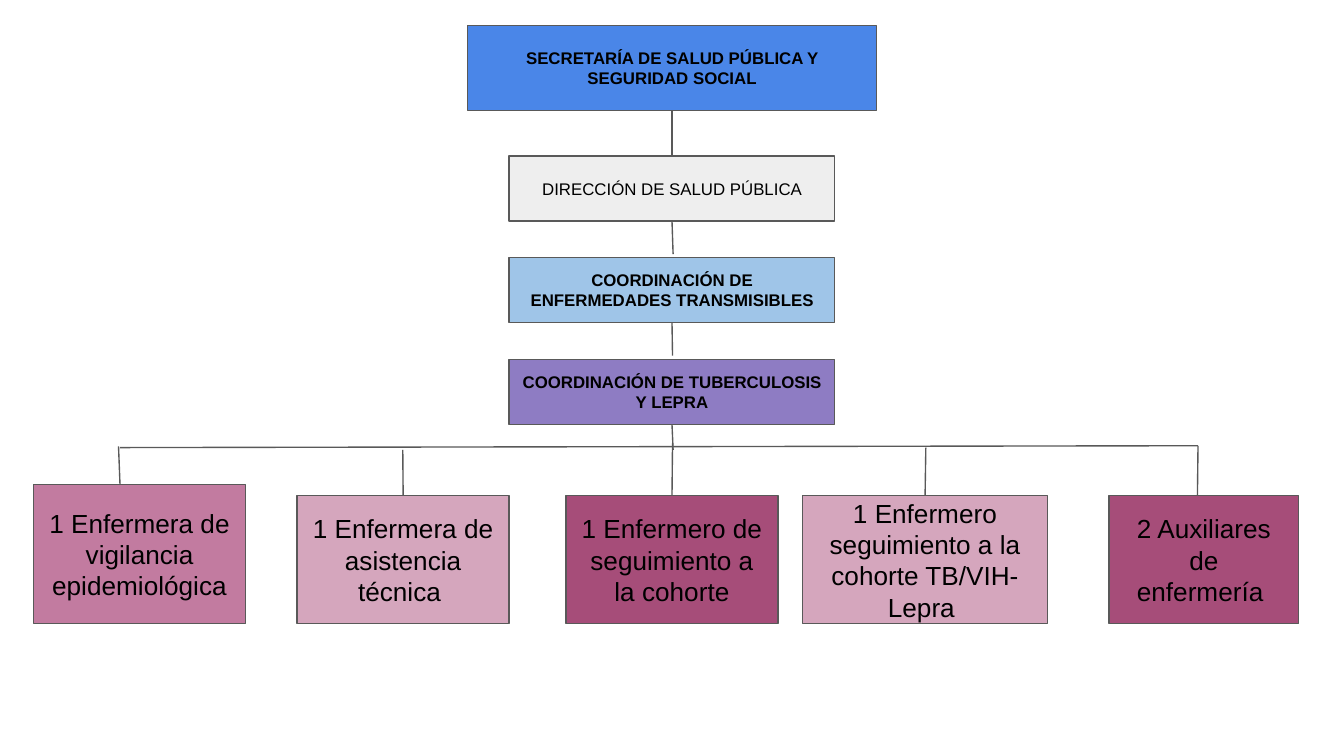
from dataclasses import dataclass
from typing import NamedTuple, Optional

from lxml.etree import SubElement
from pptx import Presentation
from pptx.dml.color import RGBColor as Rgb
from pptx.enum.shapes import MSO_CONNECTOR as Link, MSO_SHAPE as Shape
from pptx.enum.text import MSO_ANCHOR as Anchor, PP_ALIGN as Align
from pptx.oxml.ns import qn
from pptx.util import Pt


@dataclass(frozen=True)
class Theme:
    font: str = "Arial"
    ink: str = "000000"
    line: str = "595959"
    line_width: float = 0.75
    office_size: int = 9
    staff_size: int = 14
    inset: float = 7.2
    blue: str = "4A86E8"
    grey: str = "EEEEEE"
    sky: str = "9FC5E8"
    violet: str = "8E7CC3"
    mauve: str = "C27BA0"
    pink: str = "D5A6BD"
    plum: str = "A64D79"


class Unit(NamedTuple):
    text: str
    left: float
    top: float
    width: float
    height: float
    fill: str
    size: int
    bold: bool = False


class Point(NamedTuple):
    x: float
    y: float


THEME = Theme()
CENTRE = 360
BOTTOM = 334.2
TOP_SIDE, BOTTOM_SIDE = 0, 2


def office(text: str, top: float, fill: str, bold: bool = True,
           width: float = 174.4, height: float = 34.8) -> Unit:
    """A unit of the central chain, centred on the slide."""
    return Unit(text, CENTRE - width / 2, top, width, height, fill,
                THEME.office_size, bold)


def staff(text: str, left: float, width: float, fill: str,
          top: float = 265.6) -> Unit:
    """A unit of the bottom row, standing on the common base line."""
    return Unit(text, left, top, width, BOTTOM - top, fill, THEME.staff_size)


def draw_unit(slide, unit: Unit):
    box = slide.shapes.add_shape(Shape.RECTANGLE, Pt(unit.left), Pt(unit.top),
                                 Pt(unit.width), Pt(unit.height))
    box.shadow.inherit = False
    box.fill.solid()
    box.fill.fore_color.rgb = Rgb.from_string(unit.fill)
    box.line.color.rgb = Rgb.from_string(THEME.line)
    box.line.width = Pt(THEME.line_width)

    frame = box.text_frame
    inset = Pt(THEME.inset)
    frame_format = {"word_wrap": True, "vertical_anchor": Anchor.MIDDLE,
                    "margin_left": inset, "margin_right": inset,
                    "margin_top": inset, "margin_bottom": inset}
    for name, value in frame_format.items():
        setattr(frame, name, value)

    para = frame.paragraphs[0]
    para.alignment = Align.CENTER
    span = para.add_run()
    span.text = unit.text
    font_format = {"name": THEME.font, "size": Pt(unit.size), "bold": unit.bold}
    for name, value in font_format.items():
        setattr(span.font, name, value)
    span.font.color.rgb = Rgb.from_string(THEME.ink)
    return box


def draw_line(slide, start: Point, end: Point,
              upper: Optional[object] = None, lower: Optional[object] = None) -> None:
    """Draw a line, joined to the boxes above and below where given."""
    line = slide.shapes.add_connector(Link.STRAIGHT, Pt(start.x), Pt(start.y),
                                      Pt(end.x), Pt(end.y))
    line.line.color.rgb = Rgb.from_string(THEME.line)
    line.line.width = Pt(THEME.line_width)
    SubElement(line._element.spPr, qn("a:effectLst"))
    if upper is not None:
        line.begin_connect(upper, BOTTOM_SIDE)
    if lower is not None:
        line.end_connect(lower, TOP_SIDE)


OFFICES = [
    office("SECRETARÍA DE SALUD PÚBLICA Y SEGURIDAD SOCIAL", 13.7, THEME.blue,
           width=219, height=45.4),
    office("DIRECCIÓN DE SALUD PÚBLICA", 83.6, THEME.grey, bold=False),
    office("COORDINACIÓN DE ENFERMEDADES TRANSMISIBLES", 138, THEME.sky),
    office("COORDINACIÓN DE TUBERCULOSIS Y LEPRA", 192.6, THEME.violet),
]
STAFF = [
    staff("1 Enfermera de vigilancia epidemiológica", 18, 113.6, THEME.mauve, top=259.6),
    staff("1 Enfermera de asistencia técnica ", 159.2, 113.6, THEME.pink),
    staff("1 Enfermero de seguimiento a la cohorte", 303.2, 113.6, THEME.plum),
    staff("1 Enfermero seguimiento a la cohorte TB/VIH- Lepra ", 430, 131.2, THEME.pink),
    staff("2 Auxiliares de enfermería ", 594.2, 101.5, THEME.plum),
]
# Lower ends of the lines that leave each office
OFFICE_ENDS = [Point(CENTRE, 83.6), Point(360.6, 136.2),
               Point(360.3, 190.6), Point(360.6, 241)]
# Upper ends of the branches, and where the outer two meet their boxes
BRANCH_STARTS = [Point(63.5, 239.2), Point(215.8, 241), Point(360.3, 237.6),
                 Point(496, 239.8), Point(641.8, 239)]
OFF_CENTRE = {0: 64.3, 4: 641.5}


def main() -> None:
    deck = Presentation()
    deck.slide_width, deck.slide_height = Pt(720), Pt(405)
    slide = deck.slides.add_slide(deck.slide_layouts[6])

    # Boxes
    office_boxes = [draw_unit(slide, unit) for unit in OFFICES]
    staff_boxes = [draw_unit(slide, unit) for unit in STAFF]

    # Central chain
    for index, (unit, end) in enumerate(zip(OFFICES, OFFICE_ENDS)):
        start = Point(CENTRE, unit.top + unit.height)
        lower = office_boxes[1] if index == 0 else None
        draw_line(slide, start, end, office_boxes[index], lower)

    # Crossbar
    draw_line(slide, Point(64.3, 239.8), Point(641.8, 238.8))

    # Branches to the staff
    for index, (unit, start) in enumerate(zip(STAFF, BRANCH_STARTS)):
        x = OFF_CENTRE.get(index, unit.left + unit.width / 2)
        lower = None if index in OFF_CENTRE else staff_boxes[index]
        draw_line(slide, start, Point(x, unit.top), lower=lower)

    deck.save("out.pptx")


if __name__ == "__main__":
    main()
